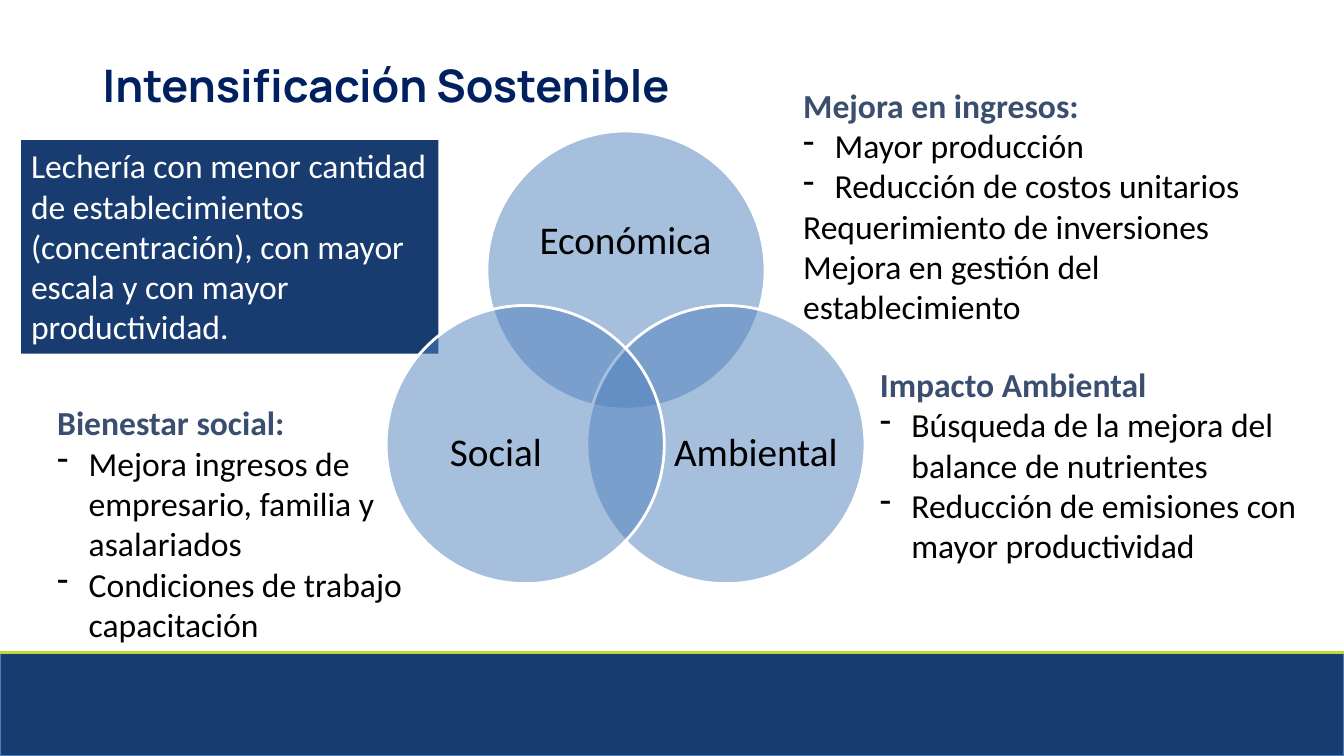
from lxml.etree import SubElement
from pptx import Presentation
from pptx.dml.color import RGBColor
from pptx.enum.shapes import MSO_CONNECTOR, MSO_SHAPE
from pptx.enum.text import MSO_ANCHOR, PP_ALIGN
from pptx.oxml.ns import qn
from pptx.util import Pt

NAVY = "183C70"
WHITE = "FFFFFF"
BLACK = "000000"


def paint(color_format, hex_color):
    color_format.rgb = RGBColor.from_string(hex_color)


def style(paragraph, size, hex_color, bold=False, name="Calibri"):
    font = paragraph.font
    font.size, font.bold, font.name = Pt(size), bold, name
    paint(font.color, hex_color)


presentation = Presentation()
presentation.slide_width, presentation.slide_height = Pt(960), Pt(540)
slide = presentation.slides.add_slide(presentation.slide_layouts[5])
shapes = slide.shapes

# Title
title = shapes.title
title.left, title.top, title.width, title.height = Pt(66.2), Pt(15.1), Pt(864), Pt(90)
title.text_frame.text = "Intensificación Sostenible"
title.text_frame.vertical_anchor = MSO_ANCHOR.MIDDLE
title.text_frame.paragraphs[0].alignment = PP_ALIGN.LEFT
style(title.text_frame.paragraphs[0], 32, "002060", True, "Manrope")

# Summary box and footer band
panels = []
for left, top, width, height in [(15.1, 100.1, 298.1, 152.6), (0, 465.8, 960, 74.2)]:
    panel = shapes.add_shape(MSO_SHAPE.RECTANGLE, Pt(left), Pt(top), Pt(width), Pt(height))
    panel.shadow.inherit = False
    panel.fill.solid()
    paint(panel.fill.fore_color, NAVY)
    panels.append(panel)

summary, footer = panels
summary.line.fill.background()
summary.text_frame.word_wrap = True
summary.text_frame.vertical_anchor = MSO_ANCHOR.TOP
summary.text_frame.text = (
    "Lechería con menor cantidad de establecimientos (concentración), "
    "con mayor escala y con mayor productividad."
)
summary.text_frame.paragraphs[0].alignment = PP_ALIGN.LEFT
style(summary.text_frame.paragraphs[0], 24, WHITE)
footer.line.width = Pt(0.75)
paint(footer.line.color, "4B7EBC")

# Green line over the footer
footer_line = shapes.add_connector(MSO_CONNECTOR.STRAIGHT, 0, Pt(465.8), Pt(960), Pt(465.8))
footer_line.line.width = Pt(2)
paint(footer_line.line.color, "BDD83C")
SubElement(footer_line._element.spPr, qn("a:effectLst"))

# Venn diagram: circle corner, then label box
diameter = 198.7
circles = [
    ("Económica", 347.8, 93.6, 373.7, 128.2, 146.2, 89.3),
    ("Ambiental", 419.2, 218.2, 480.2, 269.3, 119.5, 109.4),
    ("Social", 275.8, 218.2, 294.5, 269.3, 119.5, 109.4),
]
for name, left, top, label_left, label_top, label_width, label_height in circles:
    circle = shapes.add_shape(MSO_SHAPE.OVAL, Pt(left), Pt(top), Pt(diameter), Pt(diameter))
    circle.shadow.inherit = False
    circle.fill.solid()
    paint(circle.fill.fore_color, "4F81BD")
    fill_color = circle._element.spPr.find(qn("a:solidFill"))[0]
    SubElement(fill_color, qn("a:alpha"), val="50000")
    circle.line.width = Pt(2)
    paint(circle.line.color, WHITE)

    label = shapes.add_textbox(Pt(label_left), Pt(label_top), Pt(label_width), Pt(label_height))
    frame = label.text_frame
    frame.margin_left = frame.margin_right = frame.margin_top = frame.margin_bottom = 0
    frame.word_wrap = True
    frame.vertical_anchor = MSO_ANCHOR.MIDDLE
    frame.text = name
    frame.paragraphs[0].alignment = PP_ALIGN.CENTER
    frame.paragraphs[0].line_spacing = 0.9
    style(frame.paragraphs[0], 28, BLACK)

# Notes around the diagram: heading, then (text, bulleted)
notes = [
    (566.6, 56.9, 375.1, 181.4, "Mejora en ingresos:", [
        ("Mayor producción", True),
        ("Reducción de costos unitarios", True),
        ("Requerimiento de inversiones", False),
        ("Mejora en gestión del establecimiento", False),
    ]),
    (33.8, 283.7, 305.3, 181.4, "Bienestar social:", [
        ("Mejora ingresos de empresario, familia y asalariados", True),
        ("Condiciones de trabajo capacitación", True),
    ]),
    (621.4, 256.3, 344.2, 152.6, "Impacto Ambiental", [
        ("Búsqueda de la mejora del balance de nutrientes", True),
        ("Reducción de emisiones con mayor productividad", True),
    ]),
]
for left, top, width, height, heading, items in notes:
    note = shapes.add_textbox(Pt(left), Pt(top), Pt(width), Pt(height))
    frame = note.text_frame
    frame.word_wrap = True
    frame.text = heading
    style(frame.paragraphs[0], 24, "3A4E6F", True)
    for text, bulleted in items:
        paragraph = frame.add_paragraph()
        paragraph.text = text
        if bulleted:
            properties = paragraph._p.get_or_add_pPr()
            properties.set("marL", str(Pt(22.5)))
            properties.set("indent", str(-Pt(22.5)))
            SubElement(properties, qn("a:buChar"), char="-")
        style(paragraph, 24, BLACK)

presentation.save("out.pptx")
